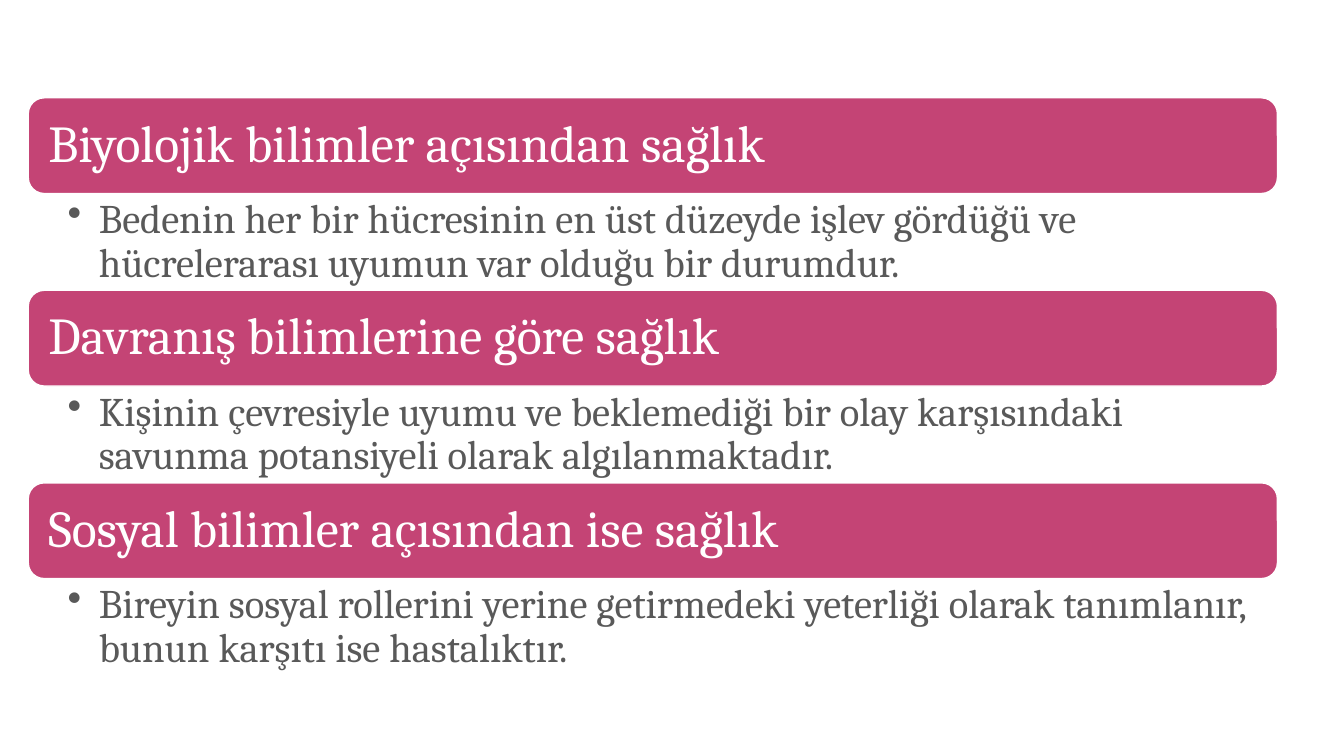
from dataclasses import dataclass

from lxml.etree import SubElement
from pptx import Presentation
from pptx.dml.color import RGBColor
from pptx.enum.shapes import MSO_SHAPE as Preset
from pptx.enum.text import MSO_ANCHOR as Anchor, PP_ALIGN as Align
from pptx.oxml.ns import qn
from pptx.slide import Slide
from pptx.text.text import _Paragraph as Paragraph
from pptx.util import Emu, Pt

EMU_PER_PX = 9144  # 100 px to the inch


def px(length: int) -> Emu:
    return Emu(length * EMU_PER_PX)


@dataclass(frozen=True)
class Theme:
    font: str = "Cambria"
    bar: RGBColor = RGBColor(0xC4, 0x44, 0x75)
    white: RGBColor = RGBColor(0xFF, 0xFF, 0xFF)
    body: RGBColor = RGBColor(0x59, 0x59, 0x59)
    heading_size: int = 37
    body_size: int = 29
    outline: int = 1


@dataclass(frozen=True)
class Box:
    left: int
    top: int
    width: int
    height: int

    def emu(self) -> tuple[Emu, Emu, Emu, Emu]:
        return px(self.left), px(self.top), px(self.width), px(self.height)


@dataclass(frozen=True)
class Definition:
    heading: str
    meaning: str


THEME = Theme()
LEFT, TOP, WIDTH = 28, 97, 1239
BAR_HEIGHT, MEANING_HEIGHT = 95, 96
PITCH = BAR_HEIGHT + MEANING_HEIGHT
BAR_INSET = 5
BULLET_INDENT = 31

DEFINITIONS = [
    Definition(
        "Biyolojik bilimler açısından sağlık",
        "Bedenin her bir hücresinin en üst düzeyde işlev gördüğü ve "
        "hücrelerarası uyumun var olduğu bir durumdur.",
    ),
    Definition(
        "Davranış bilimlerine göre sağlık",
        "Kişinin çevresiyle uyumu ve beklemediği bir olay karşısındaki "
        "savunma potansiyeli olarak algılanmaktadır.",
    ),
    Definition(
        "Sosyal bilimler açısından ise sağlık",
        "Bireyin sosyal rollerini yerine getirmedeki yeterliği olarak tanımlanır, "
        "bunun karşıtı ise hastalıktır.",
    ),
]


def add_bar(slide: Slide, box: Box) -> None:
    bar = slide.shapes.add_shape(Preset.ROUNDED_RECTANGLE, *box.emu())
    bar.shadow.inherit = False
    bar.fill.solid()
    bar.fill.fore_color.rgb = THEME.bar
    bar.line.color.rgb = THEME.white
    bar.line.width = Pt(THEME.outline)


def add_text(slide: Slide, box: Box, text: str, size: int, color: RGBColor,
             insets: tuple[int, int, int, int], anchor: Anchor) -> Paragraph:
    frame = slide.shapes.add_textbox(*box.emu()).text_frame
    frame.word_wrap = True
    frame.vertical_anchor = anchor
    (frame.margin_left, frame.margin_top,
     frame.margin_right, frame.margin_bottom) = map(px, insets)
    paragraph = frame.paragraphs[0]
    paragraph.alignment = Align.LEFT
    paragraph.line_spacing = 0.9
    run = paragraph.add_run()
    run.text = text
    run.font.name = THEME.font
    run.font.size = Pt(size)
    run.font.color.rgb = color
    return paragraph


def add_bullet(paragraph: Paragraph) -> None:
    paragraph.level = 1
    properties = paragraph._p.get_or_add_pPr()
    properties.set("marL", str(px(BULLET_INDENT)))
    properties.set("indent", str(px(-BULLET_INDENT)))
    SubElement(properties, qn("a:buChar")).set("char", "•")


def add_definition(slide: Slide, definition: Definition, top: int) -> None:
    # Heading bar
    add_bar(slide, Box(LEFT, top, WIDTH, BAR_HEIGHT))
    heading_box = Box(LEFT + BAR_INSET, top + BAR_INSET,
                      WIDTH - 2 * BAR_INSET, BAR_HEIGHT - 2 * BAR_INSET)
    add_text(slide, heading_box, definition.heading, THEME.heading_size,
             THEME.white, (15, 15, 15, 15), Anchor.MIDDLE)

    # Bulleted meaning under the bar
    meaning_box = Box(LEFT, top + BAR_HEIGHT, WIDTH, MEANING_HEIGHT)
    meaning = add_text(slide, meaning_box, definition.meaning, THEME.body_size,
                       THEME.body, (39, 5, 29, 5), Anchor.TOP)
    add_bullet(meaning)


def main() -> None:
    deck = Presentation()
    deck.slide_width, deck.slide_height = px(1333), px(750)
    slide = deck.slides.add_slide(deck.slide_layouts[6])
    for index, definition in enumerate(DEFINITIONS):
        add_definition(slide, definition, TOP + index * PITCH)
    deck.save("out.pptx")


if __name__ == "__main__":
    main()
